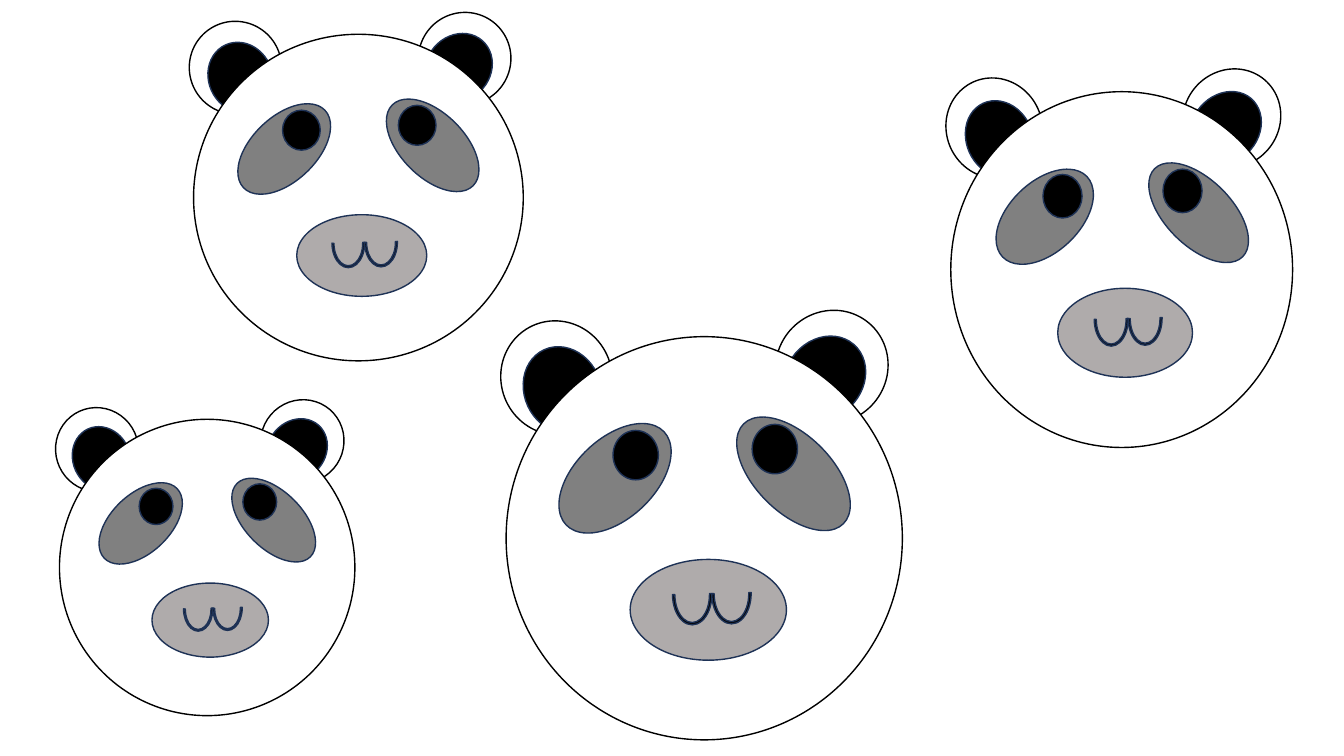
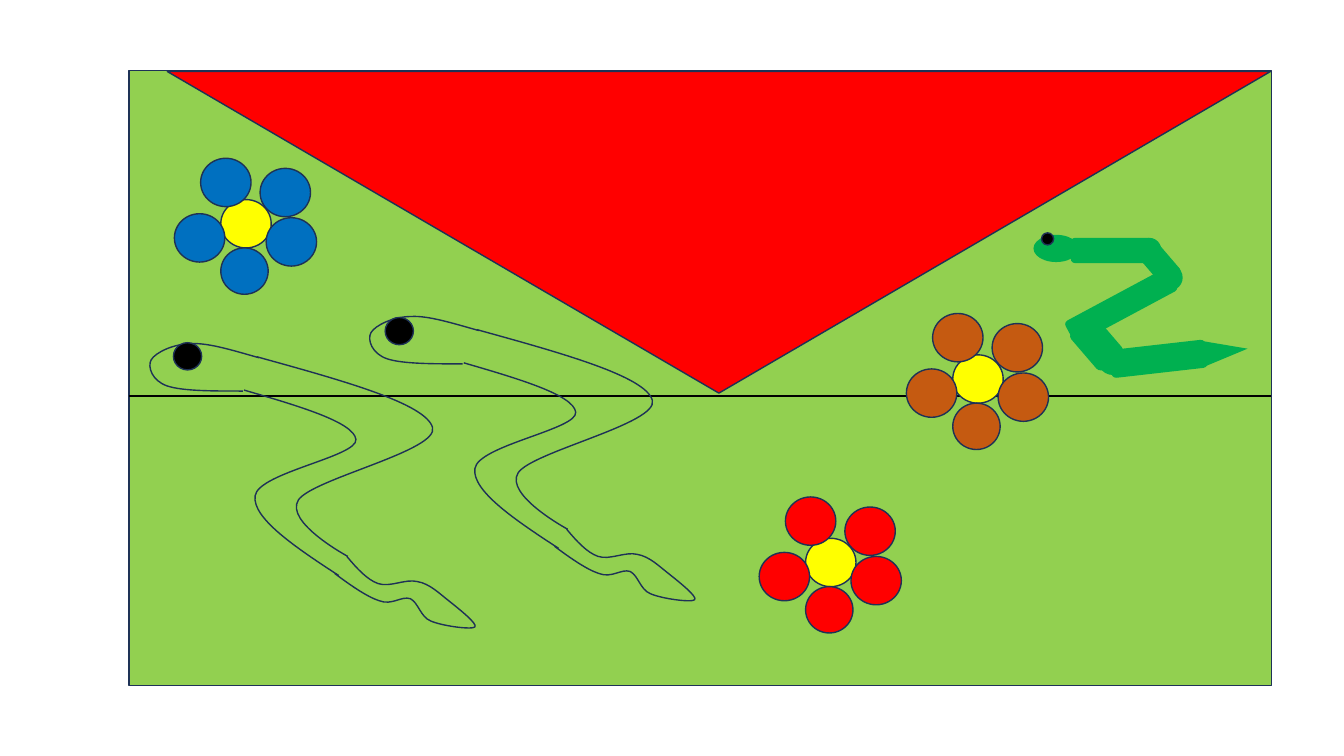
from dataclasses import dataclass

from lxml import etree
from pptx import Presentation
from pptx.dml.color import RGBColor
from pptx.enum.shapes import MSO_CONNECTOR, MSO_SHAPE
from pptx.oxml.ns import qn
from pptx.util import Pt

PX = 9144
SLIDE_WIDTH, SLIDE_HEIGHT = 1333, 750
BLANK_LAYOUT = 6

ELLIPSE = MSO_SHAPE.OVAL
RECTANGLE = MSO_SHAPE.RECTANGLE
ROUNDED = MSO_SHAPE.ROUNDED_RECTANGLE
TRIANGLE = MSO_SHAPE.ISOSCELES_TRIANGLE
BLOCK_ARC = MSO_SHAPE.BLOCK_ARC
STRAIGHT = MSO_CONNECTOR.STRAIGHT


@dataclass(frozen=True)
class Theme:
    outline: str = "1E3256"
    black: str = "000000"
    white: str = "FFFFFF"
    muzzle: str = "AFABAB"
    eye_patch: str = "808080"
    grass: str = "92D050"
    red: str = "FF0000"
    snake: str = "00B050"
    yellow: str = "FFFF00"
    brown: str = "C55A11"
    blue: str = "0070C0"
    line_width: float = 1


THEME = Theme()

HEAD_SIZE = (393, 400)
HEAD_PARTS = [
    (ELLIPSE, (-5, -16, 110, 114), 335.4, THEME.white, THEME.black),
    (ELLIPSE, (18, 9, 76, 88), 335.4, THEME.black, THEME.outline),
    (ELLIPSE, (268, -27, 110, 114), 40.6, THEME.white, THEME.black),
    (ELLIPSE, (278, -3, 76, 88), 40.6, THEME.black, THEME.outline),
    (ELLIPSE, (0, 0, 393, 400), 0, THEME.white, THEME.black),
    (ELLIPSE, (123, 221, 155, 100), 0, THEME.muzzle, THEME.outline),
    (ELLIPSE, (215, 98, 140, 76), 225, THEME.eye_patch, THEME.outline),
    (ELLIPSE, (41, 101, 134, 79), 136.4, THEME.eye_patch, THEME.outline),
    (ELLIPSE, (106, 93, 45, 49), 0, THEME.black, THEME.outline),
    (ELLIPSE, (244, 87, 45, 49), 0, THEME.black, THEME.outline),
    (BLOCK_ARC, (165, 226, 39, 60), 0, THEME.black, THEME.outline),
    (BLOCK_ARC, (204, 225, 39, 60), 0, THEME.black, THEME.outline),
]
SMILE_ADJUSTMENTS = (108, 2.07, 0.06)
PANDA_BOXES = [
    (59, 416, 293, 294),
    (192, 34, 327, 324),
    (943, 91, 339, 353),
    (502, 334, 393, 400),
]

SNAKE_CURVES = [
    ((93, 46), [
        (148, 62, 202, 78, 204, 95),
        (206, 112, 107, 128, 104, 151),
        (101, 173, 144, 202, 187, 230),
    ]),
    ((106, 13), [
        (189, 36, 273, 59, 280, 83),
        (287, 106, 161, 134, 147, 155),
        (133, 177, 196, 211, 196, 211),
    ]),
    ((195, 211), [
        (205, 223, 215, 234, 226, 238),
        (238, 242, 253, 233, 265, 236),
        (277, 238, 287, 248, 296, 255),
        (306, 263, 325, 278, 322, 281),
        (319, 284, 289, 280, 278, 275),
        (268, 271, 266, 257, 258, 253),
        (249, 250, 240, 260, 227, 255),
        (215, 251, 199, 240, 183, 228),
    ]),
    ((108, 14), [
        (83, 7, 58, -1, 41, 0),
        (23, 0, 5, 9, 1, 16),
        (-3, 23, 2, 37, 17, 42),
        (32, 47, 62, 47, 92, 47),
    ]),
]
OUTLINED_SNAKES = [((149, 341), (23, -1)), ((367, 314), (15, 1))]

GREEN_SNAKE_PARTS = [
    (ROUNDED, (38, 93, 49, 33), 49.4),
    (ELLIPSE, (0, 2, 45, 27), 0),
    (ROUNDED, (37, 5, 81, 25), 0),
    (ELLIPSE, (103, 5, 24, 25), 0),
    (ROUNDED, (103, 18, 43, 24), 49.4),
    (ELLIPSE, (124, 32, 24, 25), 0),
    (ROUNDED, (29, 60, 116, 25), 151.8),
    (ELLIPSE, (64, 112, 29, 29), 0),
    (ROUNDED, (76, 111, 96, 28), 353.5),
    (TRIANGLE, (177, 95, 26, 45), 83.5),
]

FLOWER_CENTRE = (46, 41, 50, 48)
PETALS = [
    (26, 0, 50, 48),
    (85, 10, 50, 48),
    (0, 55, 50, 48),
    (46, 89, 47, 46),
    (91, 59, 50, 48),
]
FLOWERS = [
    ((753, 493), THEME.red),
    ((899, 311), THEME.brown),
    ((173, 157), THEME.blue),
]


def emu(length):
    return round(length * PX)


def set_line(shape, color):
    if color is None:
        shape.line.fill.background()
        return
    shape.line.color.rgb = RGBColor.from_string(color)
    shape.line.width = Pt(THEME.line_width)


def add_figure(shapes, preset, box, fill, line=THEME.outline, rotation=0):
    shape = shapes.add_shape(preset, *map(emu, box))
    shape.shadow.inherit = False
    shape.fill.solid()
    shape.fill.fore_color.rgb = RGBColor.from_string(fill)
    set_line(shape, line)
    shape.rotation = rotation
    return shape


def move(box, origin):
    return (box[0] + origin[0], box[1] + origin[1], *box[2:])


def scale_part(part, rotation, head):
    left, top, width, height = part
    scale_x, scale_y = head[2] / HEAD_SIZE[0], head[3] / HEAD_SIZE[1]
    centre_x = head[0] + (left + width / 2) * scale_x
    centre_y = head[1] + (top + height / 2) * scale_y
    if 45 <= rotation % 180 < 135:
        scale_x, scale_y = scale_y, scale_x
    width, height = width * scale_x, height * scale_y
    return centre_x - width / 2, centre_y - height / 2, width, height


def add_panda(slide, head):
    shapes = slide.shapes.add_group_shape().shapes
    for preset, part, rotation, fill, line in HEAD_PARTS:
        box = scale_part(part, rotation, head)
        shape = add_figure(shapes, preset, box, fill, line, rotation)
        if preset == BLOCK_ARC:
            for index, value in enumerate(SMILE_ADJUSTMENTS):
                shape.adjustments[index] = value
            shape.element.spPr.find(qn("a:xfrm")).set("flipV", "1")


def add_curve(shapes, start, curves, origin):
    anchors = [curve[4:] for curve in curves]
    builder = shapes.build_freeform(*start, scale=PX)
    builder.add_line_segments(anchors, close=False)
    shape = builder.convert_to_shape(*map(emu, origin))
    shape.shadow.inherit = False
    shape.fill.background()
    set_line(shape, THEME.outline)
    left = min(x for x, y in [start, *anchors])
    top = min(y for x, y in [start, *anchors])
    segments = list(shape.element.iter(qn("a:lnTo")))
    for segment, curve in zip(segments, curves):
        bezier = etree.Element(qn("a:cubicBezTo"))
        for x, y in zip(curve[::2], curve[1::2]):
            etree.SubElement(bezier, qn("a:pt"), x=str(x - left), y=str(y - top))
        segment.getparent().replace(segment, bezier)


def add_outlined_snake(slide, origin, eye):
    shapes = slide.shapes.add_group_shape().shapes
    for start, curves in SNAKE_CURVES:
        add_curve(shapes, start, curves, origin)
    add_figure(shapes, ELLIPSE, move((*eye, 28, 27), origin), THEME.black)


def add_green_snake(slide, origin):
    shapes = slide.shapes.add_group_shape().shapes
    for preset, part, rotation in GREEN_SNAKE_PARTS:
        add_figure(shapes, preset, move(part, origin), THEME.snake, None, rotation)
    add_figure(shapes, ELLIPSE, move((8, 0, 12, 12), origin), THEME.black)


def add_flower(slide, origin, color):
    shapes = slide.shapes.add_group_shape().shapes
    add_figure(shapes, ELLIPSE, move(FLOWER_CENTRE, origin), THEME.yellow)
    for petal in PETALS:
        add_figure(shapes, ELLIPSE, move(petal, origin), color)


def add_meadow(slide, box):
    left, top, width, height = box
    horizon = top + 323
    shapes = slide.shapes
    add_figure(shapes, RECTANGLE, box, THEME.grass)
    add_figure(shapes, TRIANGLE, (left + 38, top + 1, 1094, 319), THEME.red, rotation=180)
    add_figure(shapes, RECTANGLE, (left, horizon, width, 287), THEME.grass)
    ends = (left, horizon, left + width, horizon)
    connector = shapes.add_connector(STRAIGHT, *map(emu, ends))
    set_line(connector, THEME.black)
    etree.SubElement(connector.element.spPr, qn("a:effectLst"))


def build_panda_slide(slide):
    for head in PANDA_BOXES:
        add_panda(slide, head)


def build_meadow_slide(slide):
    add_meadow(slide, (128, 70, 1133, 607))
    for origin, eye in OUTLINED_SNAKES:
        add_outlined_snake(slide, origin, eye)
    add_green_snake(slide, (1025, 231))
    for origin, color in FLOWERS:
        add_flower(slide, origin, color)


def main():
    presentation = Presentation()
    presentation.slide_width = emu(SLIDE_WIDTH)
    presentation.slide_height = emu(SLIDE_HEIGHT)
    layout = presentation.slide_layouts[BLANK_LAYOUT]
    for build_slide in (build_panda_slide, build_meadow_slide):
        build_slide(presentation.slides.add_slide(layout))
    presentation.save("out.pptx")


if __name__ == "__main__":
    main()
